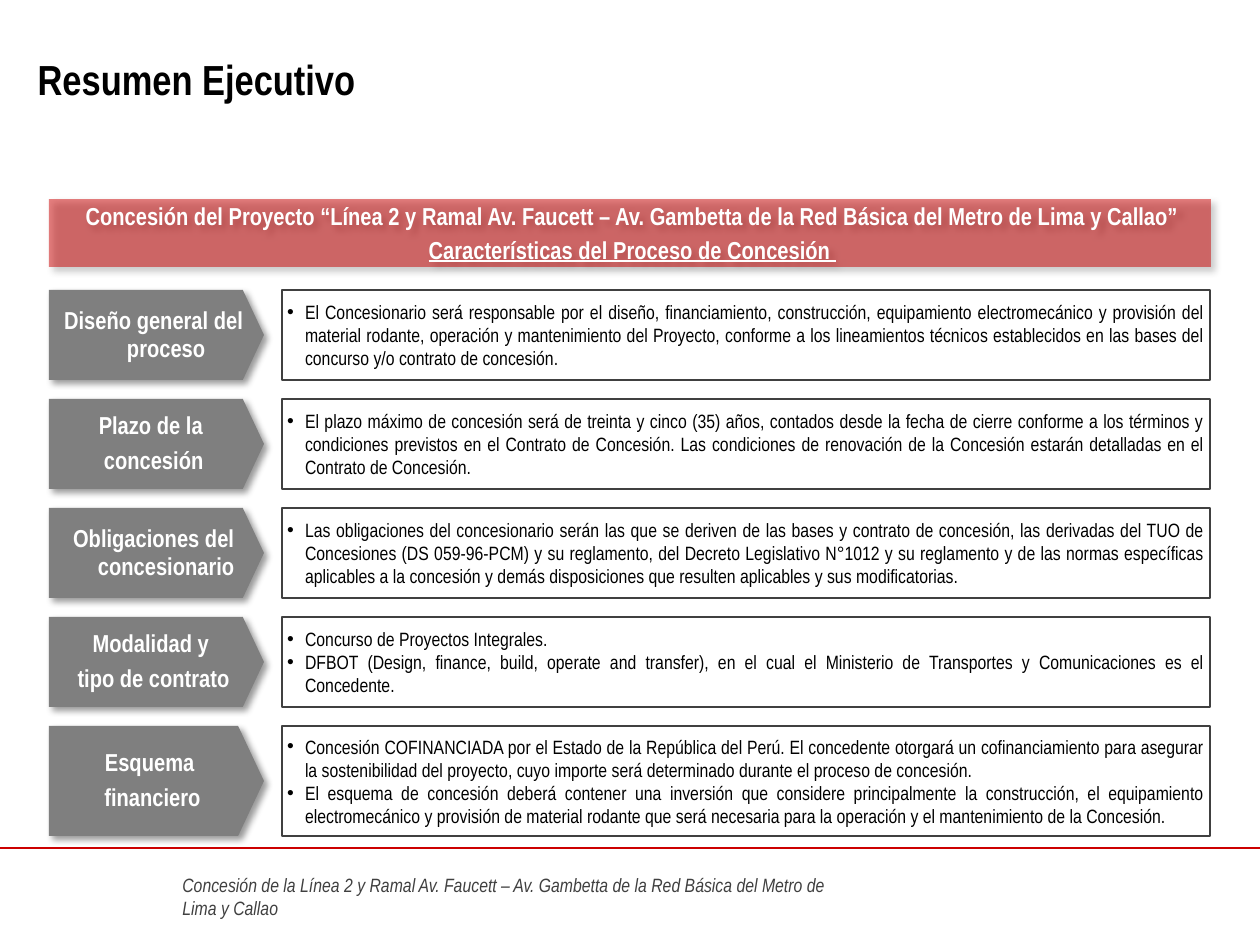
from lxml.etree import SubElement
from pptx import Presentation
from pptx.dml.color import RGBColor
from pptx.enum.shapes import MSO_CONNECTOR as Connector, MSO_SHAPE as Shape
from pptx.enum.text import MSO_ANCHOR as Anchor, MSO_AUTO_SIZE as AutoSize, PP_ALIGN as Align
from pptx.oxml.ns import qn
from pptx.util import Emu, Pt

PROJECT = "Línea 2 y Ramal Av. Faucett – Av. Gambetta de la Red Básica del Metro de Lima y Callao"
ROWS = [
    (["Diseño general del proceso"], [
        "El Concesionario será responsable por el diseño, financiamiento, construcción, equipamiento electromecánico y provisión del material rodante, operación y mantenimiento del Proyecto, conforme a los lineamientos técnicos establecidos en las bases del concurso y/o contrato de concesión."]),
    (["Plazo de la ", "concesión"], [
        "El plazo máximo de concesión será de treinta y cinco (35) años, contados desde la fecha de cierre conforme a los términos y condiciones previstos en el Contrato de Concesión. Las condiciones de renovación de la Concesión estarán detalladas en el Contrato de Concesión."]),
    (["Obligaciones del concesionario"], [
        "Las obligaciones del concesionario serán las que se deriven de las bases y contrato de concesión, las derivadas del TUO de Concesiones (DS 059-96-PCM) y su reglamento, del Decreto Legislativo N°1012 y su reglamento y de las normas específicas aplicables a la concesión y demás disposiciones que resulten aplicables y sus modificatorias."]),
    (["Modalidad y ", "tipo de contrato"], [
        "Concurso de Proyectos Integrales.",
        "DFBOT (Design, finance, build, operate and transfer), en el cual el Ministerio de Transportes y Comunicaciones es el Concedente."]),
    (["Esquema ", "financiero"], [
        "Concesión COFINANCIADA por el Estado de la República del Perú. El concedente otorgará un cofinanciamiento para asegurar la sostenibilidad del proyecto, cuyo importe será determinado durante el proceso de concesión.",
        "El esquema de concesión deberá contener una inversión que considere principalmente la construcción, el equipamiento electromecánico y provisión de material rodante que será necesaria para la operación y el mantenimiento de la Concesión. "]),
]


def px(length):
    return Emu(round(length * 914400 / 126))


def color(value):
    return RGBColor.from_string(value)


class SummaryPage:
    """Holds the style and the current slide, and draws its elements."""

    font = "Arial Narrow"
    red, gray, dark, black, white = "CC0000", "7F7F7F", "404040", "000000", "FFFFFF"

    def __init__(self, deck):
        self.page = deck.slides.add_slide(deck.slide_layouts[5])

    def span(self, para, text, size, ink, bold=False, italic=False, underline=False):
        span = para.add_run()
        span.text = text
        font = span.font
        font.name, font.size, font.color.rgb = self.font, Pt(size), color(ink)
        font.bold, font.italic, font.underline = bold, italic, underline

    def para(self, frame, index, align, indent):
        para = frame.add_paragraph() if index else frame.paragraphs[0]
        para.alignment = align
        properties = para._p.get_or_add_pPr()
        properties.set("marL", str(px(indent)))
        properties.set("indent", str(-px(indent)))
        return para

    def shadow(self, effects):
        shadow = SubElement(effects, qn("a:outerShdw"), blurRad=str(Pt(4)), dist=str(Pt(3)),
                            dir="2700000", algn="tl", rotWithShape="0")
        ink = SubElement(shadow, qn("a:srgbClr"), val=self.black)
        SubElement(ink, qn("a:alpha"), val="40000")

    def box(self, kind, place, insets, fill=None, line=None):
        shape = self.page.shapes.add_shape(kind, *map(px, place))
        shape.shadow.inherit = False
        if fill:
            shape.fill.solid()
            shape.fill.fore_color.rgb = color(fill)
            self.shadow(shape.element.spPr.find(qn("a:effectLst")))
        else:
            shape.fill.background()
        if line:
            shape.line.color.rgb = color(line)
            shape.line.width = Pt(0.75)
        else:
            shape.line.fill.background()
        frame = shape.text_frame
        frame.word_wrap, frame.vertical_anchor = True, Anchor.MIDDLE
        frame.margin_left, frame.margin_top, frame.margin_right, frame.margin_bottom = map(px, insets)
        return shape

    def heading(self, shape, lines, spacing, before, underlined=None):
        for index, text in enumerate(lines):
            para = self.para(shape.text_frame, index, Align.CENTER, 25)
            para.line_spacing = spacing
            para.space_before = Pt(before if index else 0)
            self.span(para, text, 14, self.white, bold=True, underline=index == underlined)

    def title(self, text, place):
        title = self.page.shapes.title
        title.left, title.top, title.width, title.height = map(px, place)
        frame = title.text_frame
        frame.vertical_anchor = Anchor.MIDDLE
        frame.paragraphs[0].alignment = Align.LEFT
        self.span(frame.paragraphs[0], text, 24, self.black, bold=True)

    def banner(self, lines, place):
        banner = self.box(Shape.RECTANGLE, place, (10, 5, 5, 5), fill=self.red)
        ink = banner.element.spPr.find(qn("a:solidFill")).find(qn("a:srgbClr"))
        SubElement(ink, qn("a:alpha"), val="50000")
        self.heading(banner, lines, 1, 2.5, underlined=1)

    def label(self, lines, place):
        label = self.box(Shape.PENTAGON, place, (10, 5, 5, 5), fill=self.gray)
        label.adjustments[0] = 0.235
        self.heading(label, lines, 0.95, 4)

    def details(self, items, place):
        details = self.box(Shape.RECTANGLE, place, (5, 10, 5, 10), line=self.dark)
        for index, text in enumerate(items):
            para = self.para(details.text_frame, index, Align.JUSTIFY, 18)
            properties = para._p.get_or_add_pPr()
            SubElement(properties, qn("a:buFont"), typeface="Arial")
            SubElement(properties, qn("a:buChar"), char="•")
            self.span(para, text, 11, self.black)

    def rule(self, top, width):
        rule = self.page.shapes.add_connector(Connector.STRAIGHT, 0, px(top), px(width), px(top))
        rule.line.color.rgb = color(self.red)
        rule.line.width = Pt(1)
        self.shadow(SubElement(rule.element.spPr, qn("a:effectLst")))

    def footer(self, text, place):
        frame = self.page.shapes.add_textbox(*map(px, place)).text_frame
        frame.word_wrap, frame.auto_size = True, AutoSize.SHAPE_TO_FIT_TEXT
        self.span(frame.paragraphs[0], text, 11, self.dark, italic=True)


def main():
    deck = Presentation()
    deck.slide_width, deck.slide_height = px(1260), px(945)
    page = SummaryPage(deck)
    page.footer(f"Concesión de la {PROJECT}", (170, 867, 694, 59))
    page.rule(848, 1260)
    page.title("Resumen Ejecutivo", (25, 0, 774, 158))
    page.banner([f"Concesión del Proyecto “{PROJECT}”", "Características del Proceso de Concesión "],
                (49, 199, 1162, 68))
    for index, (label, items) in enumerate(ROWS):
        top = 290 + 109 * index
        height = 110 if index == len(ROWS) - 1 else 90
        page.label(label, (49, top, 215, height))
        page.details(items, (282, top, 928, height))
    deck.save("out.pptx")


if __name__ == "__main__":
    main()
